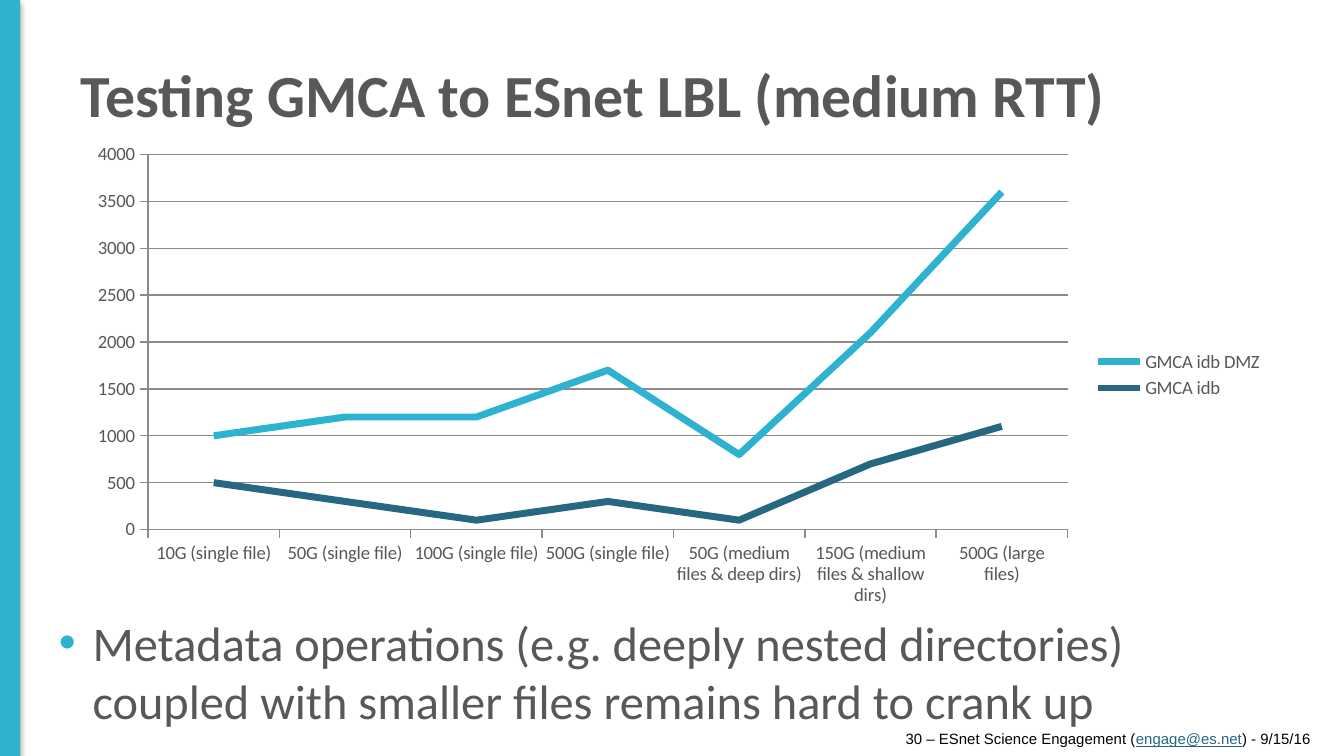
from dataclasses import dataclass

from lxml.etree import SubElement
from pptx import Presentation
from pptx.chart.data import CategoryChartData
from pptx.dml.color import RGBColor
from pptx.enum.chart import XL_CHART_TYPE, XL_LEGEND_POSITION, XL_MARKER_STYLE, XL_TICK_MARK
from pptx.enum.shapes import MSO_SHAPE
from pptx.enum.text import MSO_ANCHOR, PP_ALIGN
from pptx.oxml.ns import qn
from pptx.util import Inches, Pt


@dataclass(frozen=True)
class Theme:
    """Colours, fonts and type sizes of the deck."""
    teal: str = "2DB2CF"
    navy: str = "266782"
    grey: str = "58585B"
    rule: str = "8B8B8B"
    black: str = "000000"
    main: str = "Calibri"
    small: str = "Arial"
    head: float = 32
    body: float = 25.9
    label: float = 10
    foot: float = 8


def tint(code):
    """Turn a hex code into a colour."""
    return RGBColor.from_string(code)


def style(font, face, size, hue, bold=False, line=False):
    """Format one font."""
    font.name, font.size, font.bold, font.underline = face, Pt(size), bold, line
    font.color.rgb = tint(hue)


def write(para, text, **form):
    """Add one run of text in the given format."""
    run = para.add_run()
    run.text = text
    style(run.font, **form)


def node(owner, tag, **pairs):
    """Add an XML child with its attributes."""
    return SubElement(owner, qn(tag), {key: str(val) for key, val in pairs.items()})


class Page:
    """Places elements on a slide by a grid of tenth-inch cells."""

    def __init__(self, deck, theme):
        self.theme = theme
        self.slide = deck.slides.add_slide(deck.slide_layouts[5])
        self.cell = deck.slide_width / 100
        self.rows = deck.slide_height / self.cell

    def place(self, *cells):
        """Turn column, row, columns and rows into lengths."""
        return [round(part * self.cell) for part in cells]

    def stripe(self, cols):
        """Draw the full-height band at the left edge."""
        band = self.slide.shapes.add_shape(
            MSO_SHAPE.RECTANGLE, *self.place(0, 0, cols, self.rows))
        band.fill.solid()
        band.fill.fore_color.rgb = tint(self.theme.teal)
        band.line.fill.background()
        band.shadow.inherit = False
        effects = band.element.spPr.find(qn("a:effectLst"))
        shade = node(effects, "a:outerShdw", blurRad=Pt(3.1), dist=Pt(1.8),
                     dir=90 * 60000, rotWithShape=0)
        node(node(shade, "a:srgbClr", val=self.theme.black), "a:alpha", val=35000)

    def title(self, text, *cells):
        """Move and fill the title placeholder."""
        box = self.slide.shapes.title
        box.left, box.top, box.width, box.height = self.place(*cells)
        frame = box.text_frame
        frame.word_wrap, frame.vertical_anchor = True, MSO_ANCHOR.MIDDLE
        para = frame.paragraphs[0]
        para.alignment = PP_ALIGN.LEFT
        write(para, text, face=self.theme.main, size=self.theme.head,
              hue=self.theme.grey, bold=True)

    def box(self, *cells, anchor=MSO_ANCHOR.TOP):
        """Add a wrapping text box and return its paragraph."""
        frame = self.slide.shapes.add_textbox(*self.place(*cells)).text_frame
        frame.word_wrap, frame.vertical_anchor = True, anchor
        return frame.paragraphs[0]

    def bullet(self, text, *cells):
        """Write a bulleted paragraph."""
        para = self.box(*cells)
        props = para._p.get_or_add_pPr()
        props.set("marL", str(Inches(0.25)))
        props.set("indent", str(-Inches(0.25)))
        node(node(props, "a:buClr"), "a:srgbClr", val=self.theme.teal)
        node(props, "a:buFont", typeface=self.theme.small)
        node(props, "a:buChar", char="•")
        write(para, text, face=self.theme.main, size=self.theme.body, hue=self.theme.grey)

    def footer(self, lead, mail, tail, *cells):
        """Write the footer line with its mail address."""
        para = self.box(*cells, anchor=MSO_ANCHOR.MIDDLE)
        look = self.theme
        for text, hue, line in ((lead, look.black, False), (mail, look.navy, True),
                                (tail, look.black, False)):
            write(para, text, face=look.small, size=look.foot, hue=hue, line=line)

    def chart(self, names, series, *cells):
        """Draw a line chart with a legend at the right."""
        data = CategoryChartData()
        data.categories = names
        for name, (_, values) in series.items():
            data.add_series(name, values)
        chart = self.slide.shapes.add_chart(
            XL_CHART_TYPE.LINE, *self.place(*cells), data).chart
        style(chart.font, self.theme.main, self.theme.label, self.theme.grey)
        chart.has_title = False
        chart.has_legend = True
        chart.legend.position = XL_LEGEND_POSITION.RIGHT
        chart.legend.include_in_layout = False
        plot = chart.plots[0]
        plot.vary_by_categories = False
        for item, (hue, _) in zip(plot.series, series.values()):
            item.smooth = False
            item.marker.style = XL_MARKER_STYLE.NONE
            item.format.line.width = Pt(3.75)
            item.format.line.color.rgb = tint(hue)
        scale = chart.value_axis
        scale.minimum_scale, scale.maximum_scale, scale.major_unit = 0, 4000, 500
        scale.has_major_gridlines = True
        for axis in (scale, chart.category_axis):
            axis.major_tick_mark = XL_TICK_MARK.OUTSIDE
        for part in (scale, scale.major_gridlines, chart.category_axis):
            part.format.line.width = Pt(0.75)
            part.format.line.color.rgb = tint(self.theme.rule)


def main():
    """Build the slide and save it."""
    theme = Theme()
    deck = Presentation()
    deck.slide_width = Inches(10)
    deck.slide_height = deck.slide_width * 9 // 16
    page = Page(deck, theme)
    page.stripe(1.5)
    page.title("Testing GMCA to ESnet LBL (medium RTT)", 5, 2.3, 90, 9.4)
    page.bullet("Metadata operations (e.g. deeply nested directories) coupled with "
                "smaller files remains hard to crank up", 3.4, 45.1, 93.1, 9.1)
    names = [f"{size}G (single file)" for size in (10, 50, 100, 500)]
    names += ["50G (medium files & deep dirs)", "150G (medium files & shallow dirs)",
              "500G (large files)"]
    page.chart(names, {
        "GMCA idb DMZ": (theme.teal, (1000, 1200, 1200, 1700, 800, 2100, 3600)),
        "GMCA idb": (theme.navy, (500, 300, 100, 300, 100, 700, 1100)),
    }, 5.5, 10, 89.5, 35.8)
    page.footer("30 – ESnet Science Engagement (", "engage@es.net", ") - 9/15/16",
                66.4, 54.2, 32.6, 1.5)
    deck.save("out.pptx")


if __name__ == "__main__":
    main()
